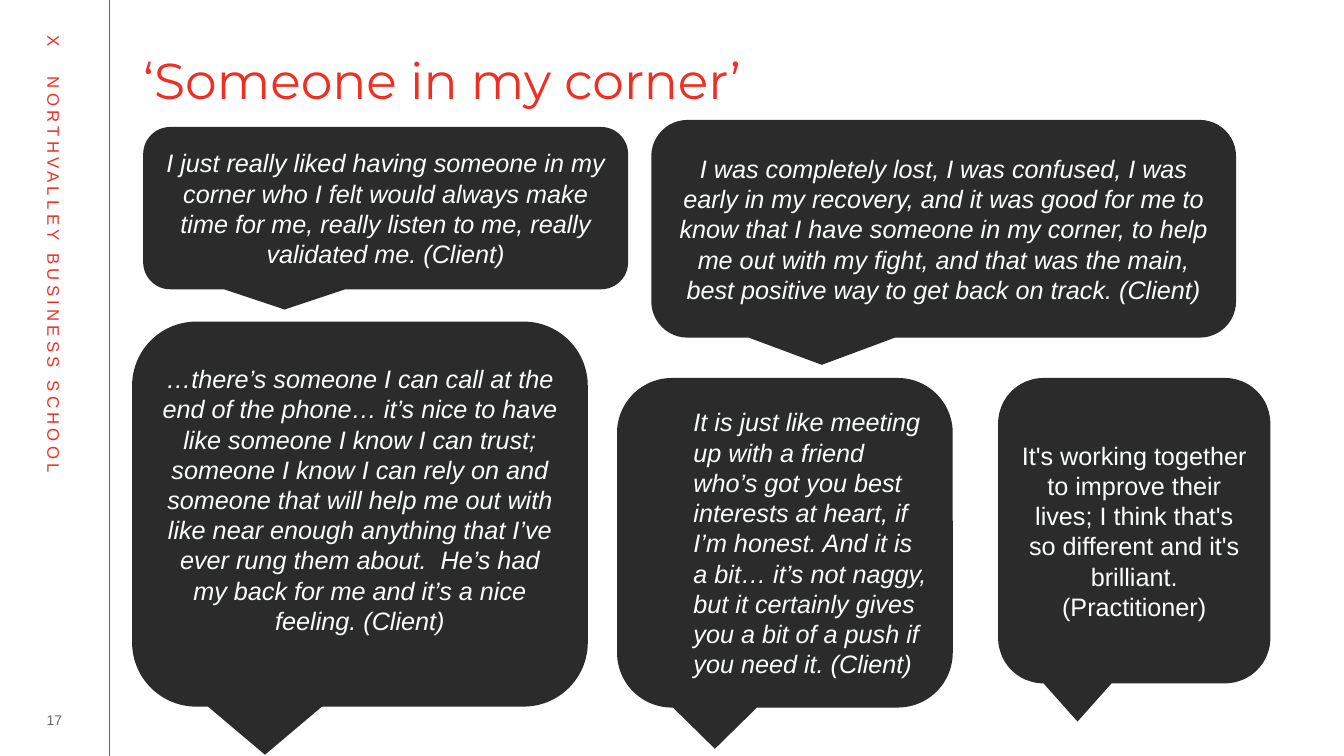
import pptx
import pptx.util
import pptx.dml.color
import pptx.enum.shapes
import pptx.enum.text
import pptx.oxml.ns
from lxml import etree

PX = 9144  # EMU per px, 100 px to the inch
RED, DARK, PALE, GREY = "EE3024", "2B2B2B", "FCFFFF", "6B6B6B"
ALIGN = pptx.enum.text.PP_ALIGN
MIDDLE = pptx.enum.text.MSO_ANCHOR.MIDDLE
SHAPE = pptx.enum.shapes.MSO_SHAPE
LINE = pptx.enum.shapes.MSO_CONNECTOR.STRAIGHT

# Quotes: box, text, slant, paragraph format, frame format, left indent
CENTRE = {"alignment": ALIGN.CENTER}
SPACED = {"alignment": ALIGN.CENTER, "space_after": pptx.util.Pt(10)}
LEFT = {"alignment": ALIGN.LEFT, "space_before": pptx.util.Pt(5),
        "space_after": pptx.util.Pt(10), "level": 1}
RAISED = {"margin_bottom": 34 * PX}
QUOTES = [
    ((646, 119, 580, 216),
     "I was completely lost, I was confused, I was early in my recovery, "
     "and it was good for me to know that I have someone in my corner, to "
     "help me out with my fight, and that was the main, best positive way "
     "to get back on track. (Client)", True, SPACED, {}, 0),
    ((990, 375, 270, 303),
     "It's working together to improve their lives; I think that's so "
     "different and it's brilliant. (Practitioner)", False, CENTRE, {}, 0),
    ((142, 126, 481, 161),
     "I just really liked having someone in my corner who I felt would "
     "always make time for me, really listen to me, really validated me. "
     "(Client)", True, SPACED, {}, 0),
    ((131, 319, 452, 382),
     "…there’s someone I can call at the end of the phone… it’s nice to "
     "have like someone I know I can trust; someone I know I can rely on "
     "and someone that will help me out with like near enough anything "
     "that I’ve ever rung them about.  He’s had my back for me and it’s a "
     "nice feeling. (Client)", True, CENTRE, RAISED, 0),
    ((612, 375, 333, 327),
     "It is just like meeting up with a friend who’s got you best "
     "interests at heart, if I’m honest. And it is a bit… it’s not naggy, "
     "but it certainly gives you a bit of a push if you need it. (Client)",
     True, LEFT, {}, 50),
]


def tint(code):
    return pptx.dml.color.RGBColor.from_string(code)


def scale(box):
    return [side * PX for side in box]


def style(item, form):
    for name, value in form.items():
        setattr(item, name, value)


def write(shape, text, size, shade, font="Arial", slant=False, para={}, frame={}):
    """Fill a shape with one styled paragraph and return the paragraph."""
    body = shape.text_frame
    style(body, {"word_wrap": True, **frame})
    line = body.paragraphs[0]
    style(line, para)
    run = line.add_run()
    run.text = text
    style(run.font, {"name": font, "size": pptx.util.Pt(size), "italic": slant})
    run.font.color.rgb = tint(shade)
    return line


def label(slide, box, text, size, shade, **form):
    shape = slide.shapes.add_textbox(*scale(box))
    return shape, write(shape, text, size, shade, **form)


def quote(slide, box, text, slant, para, frame, indent):
    shape = slide.shapes.add_shape(SHAPE.ROUNDED_RECTANGULAR_CALLOUT, *scale(box))
    shape.shadow.inherit = False
    shape.fill.solid()
    shape.fill.fore_color.rgb = tint(DARK)
    shape.line.fill.background()
    line = write(shape, text, 18, PALE, slant=slant, para=para,
                 frame={"vertical_anchor": MIDDLE, **frame})
    props = line._p.get_or_add_pPr()
    props.set("marL", str(indent * PX))
    props.set("indent", "0")


def rule(slide, ends):
    line = slide.shapes.add_connector(LINE, *scale(ends))
    line.line.color.rgb = tint(RED)
    line.line.width = pptx.util.Pt(0.5)
    etree.SubElement(line._element.spPr, pptx.oxml.ns.qn("a:effectLst"))


def banner(slide):
    """Turned school name, letter-spaced, with a tab after the mark."""
    shape, line = label(slide, (-230, 294, 567, 30),
                        "X\tNORTHVALLEY BUSINESS SCHOOL", 12, RED)
    shape.rotation = 90
    line.runs[0].font._element.set("spc", "300")
    stops = etree.SubElement(line._p.get_or_add_pPr(), pptx.oxml.ns.qn("a:tabLst"))
    etree.SubElement(stops, pptx.oxml.ns.qn("a:tab"), pos=str(41 * PX), algn="l")


def main():
    deck = pptx.Presentation()
    style(deck, {"slide_width": 1333 * PX, "slide_height": 750 * PX})
    slide = deck.slides.add_slide(deck.slide_layouts[6])

    # Side strip
    rule(slide, (108, 0, 108, 750))
    banner(slide)
    flush = dict.fromkeys(
        ("margin_left", "margin_top", "margin_right", "margin_bottom"), 0)
    label(slide, (26, 702, 56, 25), "17", 10, GREY, para=CENTRE,
          frame={**flush, "vertical_anchor": MIDDLE})

    # Title
    label(slide, (142, 39, 1134, 120), "‘Someone in my corner’", 36, "ED2F24",
          font="Montserrat", para={"line_spacing": 0.8},
          frame={**flush, "margin_top": 21 * PX})

    # Speech bubbles
    for item in QUOTES:
        quote(slide, *item)

    deck.save("out.pptx")


if __name__ == "__main__":
    main()
